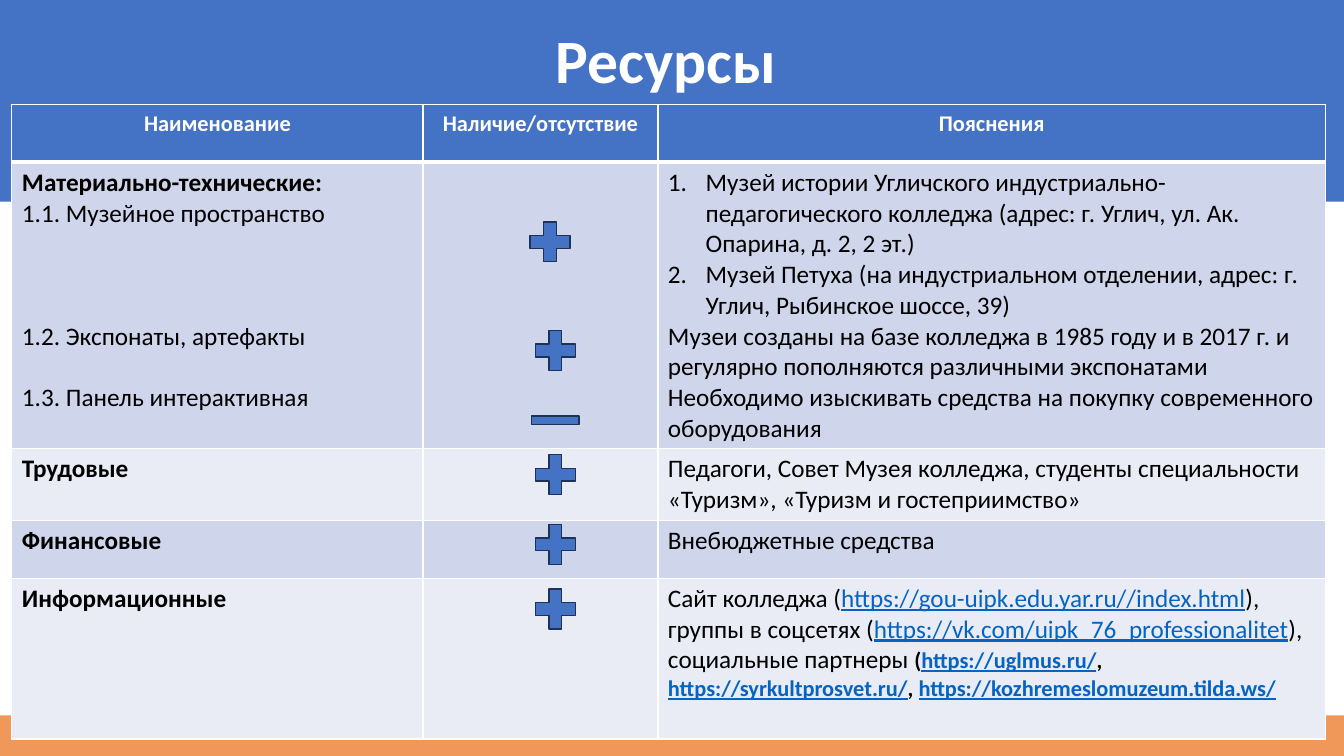
import pptx
import pptx.util
import pptx.dml.color
import pptx.enum.shapes
import pptx.enum.text
import pptx.oxml
import pptx.oxml.ns

Cm, Pt = pptx.util.Cm, pptx.util.Pt
RGB = pptx.dml.color.RGBColor
SHAPE = pptx.enum.shapes.MSO_SHAPE
ALIGN = pptx.enum.text.PP_ALIGN
ANCHOR = pptx.enum.text.MSO_ANCHOR

BLUE = RGB(0x44, 0x72, 0xC4)
ORANGE = RGB(0xED, 0x7D, 0x31)
NAVY = RGB(0x1E, 0x32, 0x56)
LINK = RGB(0x05, 0x63, 0xC1)
WHITE = RGB(0xFF, 0xFF, 0xFF)
BLACK = RGB(0, 0, 0)
BANDS = RGB(0xCF, 0xD5, 0xEA), RGB(0xE9, 0xEB, 0xF5)
LINE = 22  # height of one 18 pt text line, in points


def write(par, text, size=18, color=BLACK, bold=False, under=False):
    run = par.add_run()
    run.text = text
    font = run.font
    font.name, font.size, font.bold = "Calibri", Pt(size), bold
    font.color.rgb = color
    if under:
        font.underline = True


def node(parent, tag, index=None, **attrs):
    item = pptx.oxml.parse_xml(f"<a:{tag} {pptx.oxml.ns.nsdecls('a')}/>")
    for key, value in attrs.items():
        item.set(key, str(value))
    parent.insert(len(parent) if index is None else index, item)
    return item


class Deck:
    def __init__(self):
        self.file = pptx.Presentation()
        self.file.slide_width, self.file.slide_height = Cm(33.87), Cm(19.05)
        self.slide = self.file.slides.add_slide(self.file.slide_layouts[6])

    def shape(self, kind, x, y, w, h, fill, line=None, alpha=None):
        item = self.slide.shapes.add_shape(kind, Cm(x), Cm(y), Cm(w), Cm(h))
        item.shadow.inherit = False
        item.fill.solid()
        item.fill.fore_color.rgb = fill
        if line is None:
            item.line.fill.background()
        else:
            item.line.color.rgb = line
            item.line.width = Pt(1)
        if alpha is not None:
            color = item.fill._xPr.find(".//" + pptx.oxml.ns.qn("a:srgbClr"))
            node(color, "alpha", val=alpha * 1000)

    def title(self, text, x, y, w, h):
        frame = self.slide.shapes.add_textbox(Cm(x), Cm(y), Cm(w), Cm(h)).text_frame
        frame.word_wrap = True
        frame.vertical_anchor = ANCHOR.MIDDLE
        par = frame.paragraphs[0]
        par.alignment, par.line_spacing = ALIGN.CENTER, 0.9
        write(par, text, size=44, color=WHITE, bold=True)

    def grid(self, x, y, widths, heights):
        item = self.slide.shapes.add_table(
            len(heights), len(widths), Cm(x), Cm(y), Cm(sum(widths)), Cm(sum(heights)))
        table = item.table
        for col, width in zip(table.columns, widths):
            col.width = Cm(width)
        for r, (row, height) in enumerate(zip(table.rows, heights)):
            row.height = Cm(height)
            for cell in row.cells:
                cell.fill.solid()
                cell.fill.fore_color.rgb = BANDS[(r - 1) % 2] if r else BLUE
                self.edges(cell, top=3 if r == 1 else 1, base=1 if r else 3)
        return table

    def edges(self, cell, top, base):
        props = cell._tc.get_or_add_tcPr()
        for i, (side, width) in enumerate(zip("LRTB", (1, 1, top, base))):
            edge = node(props, "ln" + side, index=i, w=Pt(width))
            node(node(edge, "solidFill"), "srgbClr", val=WHITE)

    def fill(self, cell, pars):
        """Each paragraph is (runs, lines of space before, numbered)."""
        frame = cell.text_frame
        for i, (runs, gap, number) in enumerate(pars):
            par = frame.add_paragraph() if i else frame.paragraphs[0]
            if gap:
                par.space_before = Pt(gap * LINE)
            if number:
                props = par._p.get_or_add_pPr()
                props.set("marL", str(Cm(0.95)))
                props.set("indent", str(-Cm(0.95)))
                node(props, "buFont", typeface="+mj-lt")
                node(props, "buAutoNum", type="arabicPeriod")
            for text, style in runs:
                write(par, text, **style)


def par(text, gap=0, number=False, **style):
    return [(text, style)], gap, number


HEADS = "Наименование", "Наличие/отсутствие", "Пояснения"
URL = dict(color=LINK, under=True)
SMALL = dict(size=16, bold=True)
SITES = [
    ("Сайт колледжа (", {}),
    ("https://gou-uipk.edu.yar.ru//index.html", URL),
    ("), группы в соцсетях (", {}),
    ("https://vk.com/uipk_76_professionalitet", URL),
    ("), социальные партнеры ", {}),
    ("(", SMALL),
    ("https://uglmus.ru/", URL | SMALL),
    (", ", SMALL),
    ("https://syrkultprosvet.ru/", URL | SMALL),
    (", ", SMALL),
    ("https://kozhremeslomuzeum.tilda.ws/", URL | SMALL),
]
ROWS = [
    ([par("Материально-технические:", bold=True),
      par("1.1. Музейное пространство"),
      par("1.2. Экспонаты, артефакты", gap=3),
      par("1.3. Панель интерактивная", gap=1)],
     [par("Музей истории Угличского индустриально-педагогического колледжа "
          "(адрес: г. Углич, ул. Ак. Опарина, д. 2, 2 эт.)", number=True),
      par("Музей Петуха (на индустриальном отделении, адрес: г. Углич, "
          "Рыбинское шоссе, 39)", number=True),
      par("Музеи созданы на базе колледжа в 1985 году и в 2017 г. и регулярно "
          "пополняются различными экспонатами"),
      par("Необходимо изыскивать средства на покупку современного оборудования")]),
    ([par("Трудовые", bold=True)],
     [par("Педагоги, Совет Музея колледжа, студенты специальности «Туризм», "
          "«Туризм и гостеприимство»")]),
    ([par("Финансовые", bold=True)], [par("Внебюджетные средства")]),
    ([par("Информационные", bold=True)], [(SITES, 0, False)]),
]


def main():
    deck = Deck()

    # Background bands and title
    deck.shape(SHAPE.RECTANGLE, 0, 0, 33.87, 5.08, BLUE)
    deck.shape(SHAPE.RECTANGLE, 0, 18.03, 33.87, 1.02, ORANGE, alpha=80)
    deck.title("Ресурсы", 2.18, 0.41, 29.21, 2.39)

    # Resource table
    table = deck.grid(0.3, 2.64, (10.36, 5.92, 16.82), (1.45, 7.22, 1.81, 1.45, 4.05))
    for cell, head in zip(table.rows[0].cells, HEADS):
        deck.fill(cell, [par(head, size=16, color=WHITE, bold=True)])
        cell.text_frame.paragraphs[0].alignment = ALIGN.CENTER
    for r, (name, note) in enumerate(ROWS, 1):
        deck.fill(table.cell(r, 0), name)
        deck.fill(table.cell(r, 2), note)

    # Marks: plus is available, minus is missing
    for x, y in ((13.18, 5.41), (13.31, 8.15), (13.31, 11.28), (13.31, 13.03), (13.31, 14.66)):
        deck.shape(SHAPE.MATH_PLUS, x, y, 1.37, 1.37, BLUE, line=NAVY)
    deck.shape(SHAPE.MATH_MINUS, 13.18, 10.16, 1.63, 0.86, BLUE, line=NAVY)

    deck.file.save("out.pptx")


if __name__ == "__main__":
    main()
